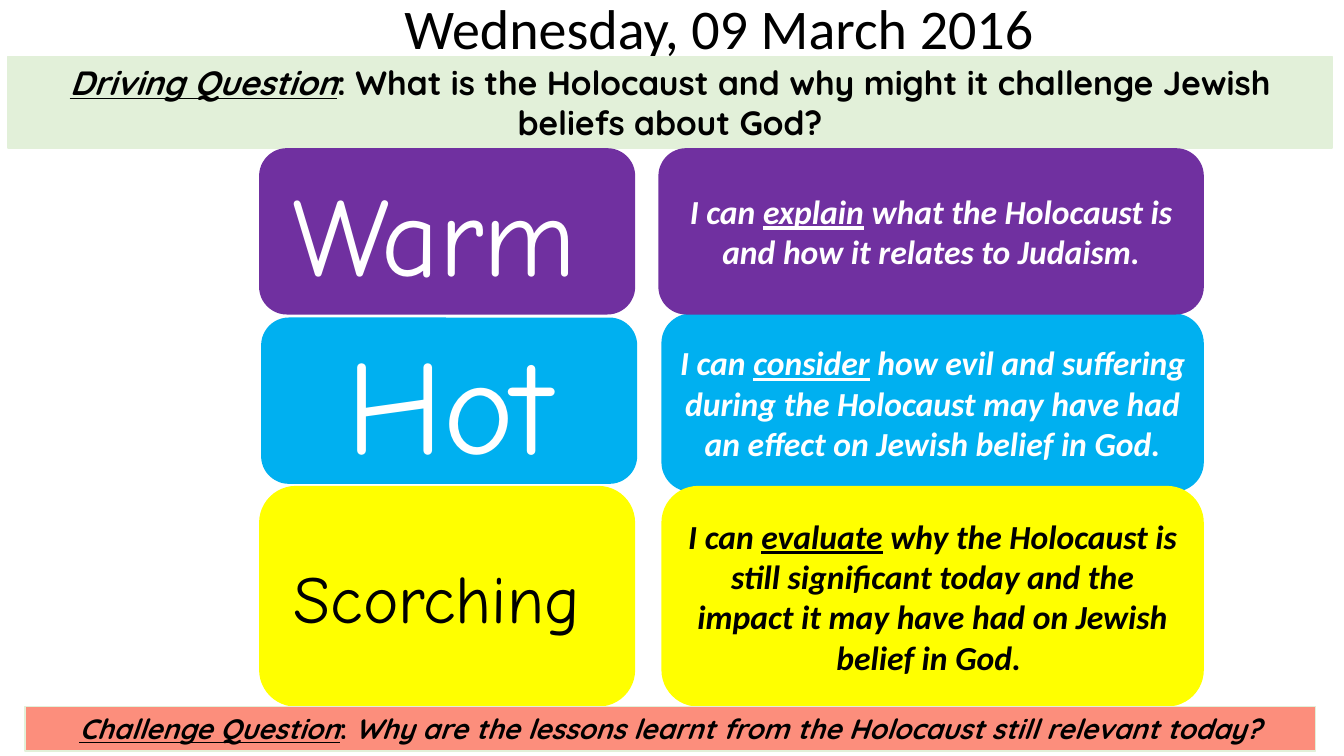
from pptx import Presentation
from pptx.dml.color import RGBColor
from pptx.enum.shapes import MSO_SHAPE
from pptx.enum.text import MSO_ANCHOR, MSO_AUTO_SIZE, PP_ALIGN
from pptx.util import Pt

RECT, ROUNDED = MSO_SHAPE.RECTANGLE, MSO_SHAPE.ROUNDED_RECTANGLE
TOP, MIDDLE = MSO_ANCHOR.TOP, MSO_ANCHOR.MIDDLE
LEFT, CENTER = PP_ALIGN.LEFT, PP_ALIGN.CENTER
NO_FIT, GROW = MSO_AUTO_SIZE.NONE, MSO_AUTO_SIZE.SHAPE_TO_FIT_TEXT

PX = 9144  # 100 px to the inch
COLORS = {
    "purple": "7030A0", "blue": "00B0F0", "yellow": "FFFF00",
    "green": "E2F0D9", "salmon": "FC8E7C",
    "white": "FFFFFF", "black": "000000",
}


def rgb(name):
    return RGBColor.from_string(COLORS[name])


def add_text(p, text, size, font="Calibri", color="black", bold=False, italic=False, underline=False):
    r = p.add_run()
    r.text = text
    f = r.font
    f.size, f.name, f.bold, f.italic, f.underline = Pt(size), font, bold, italic, underline
    f.color.rgb = rgb(color)


prs = Presentation()
prs.slide_width, prs.slide_height = 1333 * PX, 750 * PX
s = prs.slides.add_slide(prs.slide_layouts[5])

# Date
title = s.shapes.title
title.left, title.top, title.width, title.height = [v * PX for v in (391, 7, 795, 40)]
tf = title.text_frame
tf.auto_size, tf.vertical_anchor, tf.word_wrap = NO_FIT, MIDDLE, True
p = tf.paragraphs[0]
p.alignment = LEFT
add_text(p, "Wednesday, 09 March 2016", 40)

# Boxes, back to front: geometry, place, fill, outline, runs
goal = dict(size=24, bold=True, italic=True)
white_goal = dict(goal, color="white")
label = dict(font="Comic Neue", color="white")
question = dict(font="Quicksand", bold=True)
heading = dict(question, italic=True, underline=True)

boxes = [
    (ROUNDED, (656, 311, 538, 177), "blue", None, [
        ("I can ", white_goal),
        ("consider", dict(white_goal, underline=True)),
        (" how evil and suffering during the Holocaust may have had an effect "
         "on Jewish belief in God.", white_goal)]),
    (ROUNDED, (656, 482, 538, 219), "yellow", None, [
        ("I can ", goal),
        ("evaluate", dict(goal, underline=True)),
        (" why the Holocaust is still significant today and the impact it may "
         "have had on Jewish belief in God. ", goal)]),
    (ROUNDED, (259, 315, 373, 165), "blue", None, [("Hot", dict(label, size=96))]),
    (ROUNDED, (257, 482, 373, 219), "yellow", None, [
        ("Scorching", dict(label, size=48, color="black")),
        (" ", dict(label, size=44))]),
    (RECT, (25, 701, 1280, 44), "salmon", "green", [
        ("Challenge Question", dict(heading, size=20)),
        (": ", dict(question, size=20)),
        ("Why are the lessons learnt from the Holocaust still relevant today?",
         dict(question, size=20, italic=True))]),
    (RECT, (8, 56, 1313, 91), "green", "green", [
        ("Driving Question", dict(heading, size=24)),
        (": What is the Holocaust and why might it challenge Jewish beliefs about God?",
         dict(question, size=24))]),
    (ROUNDED, (653, 147, 541, 165), "purple", None, [
        ("I can ", white_goal),
        ("explain", dict(white_goal, underline=True)),
        (" what the Holocaust is and how it relates to Judaism.", white_goal)]),
    (ROUNDED, (257, 147, 373, 165), "purple", None, [
        ("Warm", dict(label, size=80)),
        (" ", dict(label, size=54))]),
]

for geometry, place, fill, outline, runs in boxes:
    sp = s.shapes.add_shape(geometry, *[v * PX for v in place])
    sp.shadow.inherit = False
    sp.fill.solid()
    sp.fill.fore_color.rgb = rgb(fill)
    if outline:
        sp.line.color.rgb = rgb(outline)
        sp.line.width = Pt(1)
    else:
        sp.line.fill.background()
    tf = sp.text_frame
    tf.word_wrap = True
    tf.auto_size = GROW if geometry == RECT else NO_FIT
    tf.vertical_anchor = TOP if geometry == RECT else MIDDLE
    p = tf.paragraphs[0]
    p.alignment = CENTER
    for text, style in runs:
        add_text(p, text, **style)

prs.save("out.pptx")
